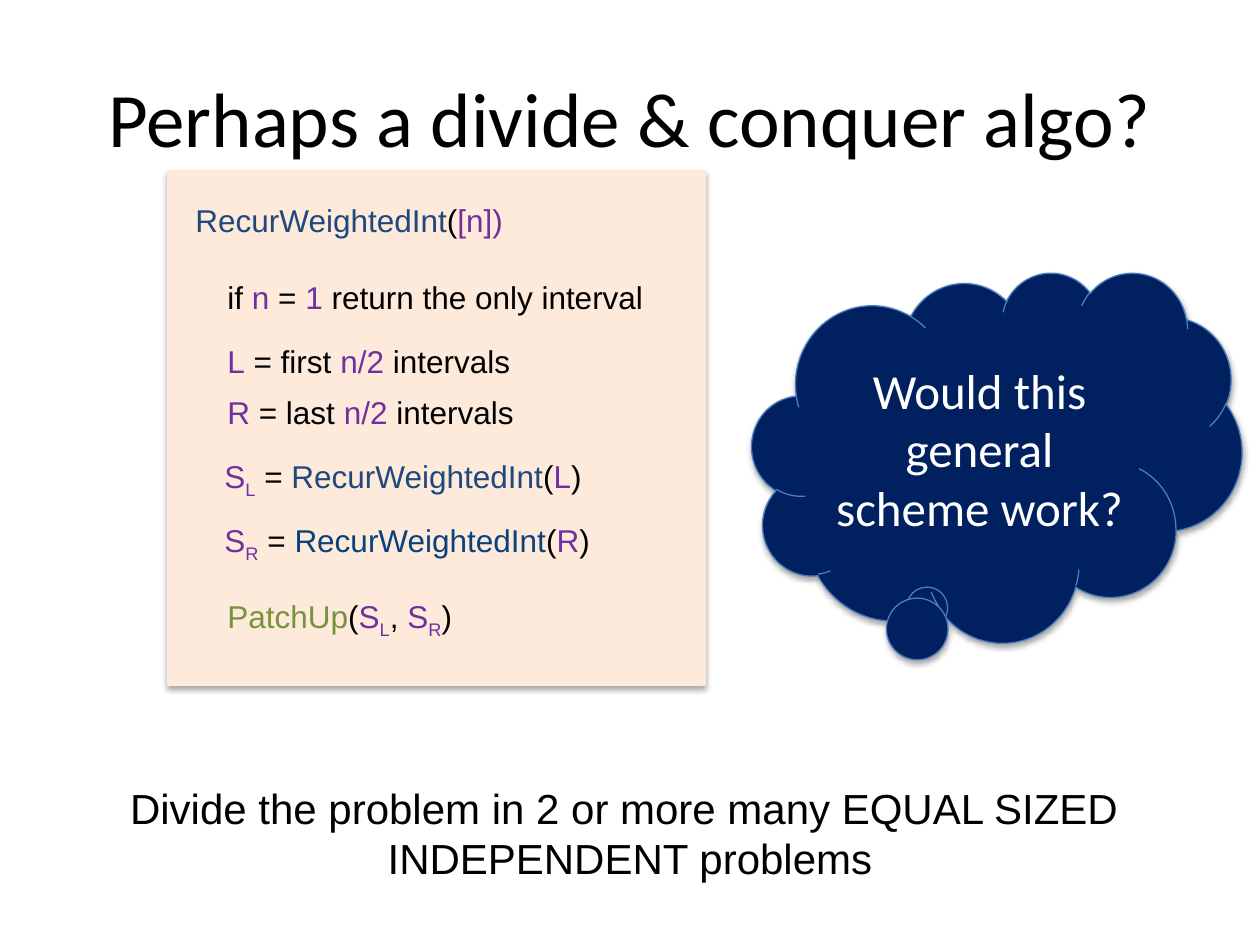
from lxml import etree
from pptx import Presentation
from pptx import util as u
from pptx.dml.color import RGBColor
from pptx.enum import shapes, text
from pptx.oxml.ns import qn

COLORS = {
    "black": "000000", "white": "FFFFFF", "purple": "7030A0",
    "blue": "1F497D", "deep_blue": "0A417D", "green": "77933C",
    "peach": "FDEADA", "navy": "002060", "outline": "4B7EBC",
}


def px(n):
    return u.Emu(round(n * 914400 / 126))


def rgb(name):
    return RGBColor.from_string(COLORS[name])


def write(frame, paragraphs, *, size=18, font="Arial", align="LEFT", anchor="TOP", wrap=True):
    """Each paragraph is a list of (text, colour) runs; a third item "sub" lowers the run."""
    frame.word_wrap = wrap
    frame.vertical_anchor = getattr(text.MSO_ANCHOR, anchor)
    for i, runs in enumerate(paragraphs):
        paragraph = frame.add_paragraph() if i else frame.paragraphs[0]
        paragraph.alignment = getattr(text.PP_ALIGN, align)
        for words, color, *level in runs:
            run = paragraph.add_run()
            run.text = words
            run.font.size = u.Pt(size)
            run.font.name = font
            run.font.color.rgb = rgb(color)
            if "sub" in level:
                run.font._element.set("baseline", "-25000")


class Deck:
    def __init__(self, width, height):
        self.prs = Presentation()
        self.prs.slide_width, self.prs.slide_height = px(width), px(height)
        self.slide = self.prs.slides.add_slide(self.prs.slide_layouts[6])

    def label(self, box, paragraphs, **style):
        label = self.slide.shapes.add_textbox(*map(px, box))
        write(label.text_frame, paragraphs, **style)

    def panel(self, kind, box, fill, line):
        panel = self.slide.shapes.add_shape(kind, *map(px, box))
        panel.fill.solid()
        panel.fill.fore_color.rgb = rgb(fill)
        panel.line.color.rgb = rgb(line)
        panel.line.width = u.Pt(0.75)
        self.drop_shadow(panel)
        return panel

    def drop_shadow(self, panel):
        panel.shadow.inherit = False
        effects = panel._element.spPr.find(qn("a:effectLst"))
        shadow = etree.SubElement(
            effects, qn("a:outerShdw"), blurRad=str(u.Pt(3.1)), dist=str(u.Pt(1.8)),
            dir="5400000", rotWithShape="0")
        color = etree.SubElement(shadow, qn("a:srgbClr"), val=COLORS["black"])
        etree.SubElement(color, qn("a:alpha"), val="35000")


def recursive_call(half, call_color):
    return [("S", "purple"), (half, "purple", "sub"), (" = ", "black"),
            ("RecurWeightedInt", call_color), ("(", "black"), (half, "purple"), (")", "black")]


def main():
    deck = Deck(1260, 945)

    # Algorithm panel and title
    deck.panel(shapes.MSO_SHAPE.RECTANGLE, (168, 171, 537, 514), "peach", "peach")
    deck.label((63, 38, 1134, 158), [[("Perhaps a divide & conquer algo?", "black")]],
               size=44, font="Calibri", align="CENTER", anchor="MIDDLE")

    # Pseudocode: left, top, width, runs
    pseudocode = [
        (183, 195, 335, [("RecurWeightedInt", "blue"), ("(", "black"), ("[n])", "purple")]),
        (215, 272, 445, [("if ", "black"), ("n", "purple"), (" = ", "black"),
                         ("1", "purple"), (" return the only interval", "black")]),
        (215, 336, 310, [("L", "purple"), (" = first ", "black"),
                         ("n/2", "purple"), (" intervals", "black")]),
        (215, 387, 314, [("R", "purple"), (" = last ", "black"),
                         ("n/2 ", "purple"), ("intervals", "black")]),
        (212, 451, 392, recursive_call("L", "blue")),
        (212, 515, 403, recursive_call("R", "deep_blue")),
        (215, 591, 256, [("PatchUp", "green"), ("(", "black"),
                         ("S", "purple"), ("L", "purple", "sub"), (", ", "black"),
                         ("S", "purple"), ("R", "purple", "sub"), (")", "black")]),
    ]
    for left, top, width, runs in pseudocode:
        deck.label((left, top, width, 50), [runs], wrap=False)

    # Thought cloud
    cloud = deck.panel(shapes.MSO_SHAPE.CLOUD_CALLOUT, (752, 272, 490, 370), "navy", "outline")
    cloud.adjustments[0], cloud.adjustments[1] = -0.14, 0.4
    write(cloud.text_frame, [[("Would this general scheme work?", "white")]],
          size=28, font="Calibri", align="CENTER", anchor="MIDDLE")

    # Takeaway
    deck.label((112, 776, 1036, 115),
               [[("Divide the problem in 2 or more many EQUAL SIZED ", "black")],
                [("INDEPENDENT problems", "black")]],
               size=24, align="CENTER", wrap=False)

    deck.prs.save("out.pptx")


if __name__ == "__main__":
    main()
